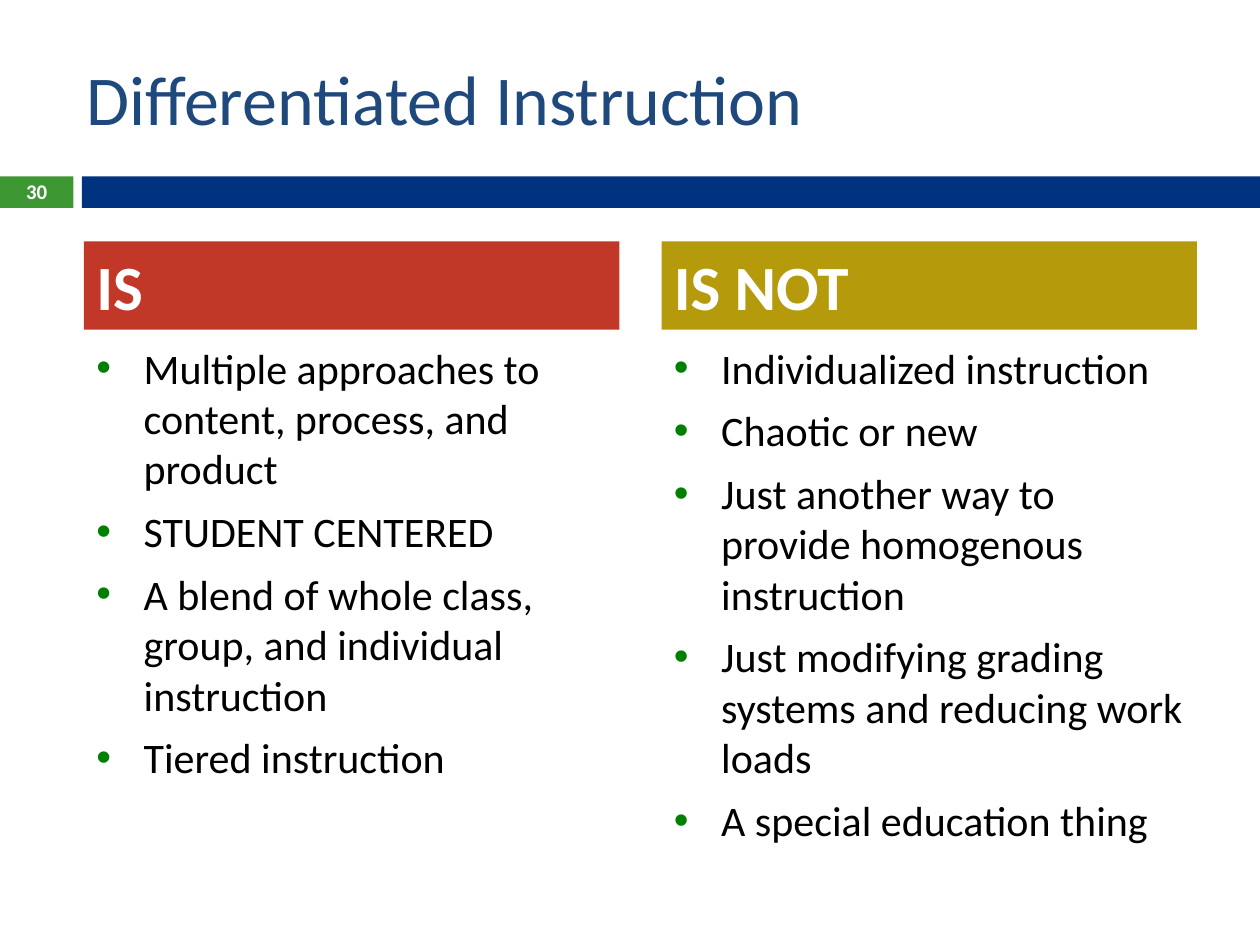
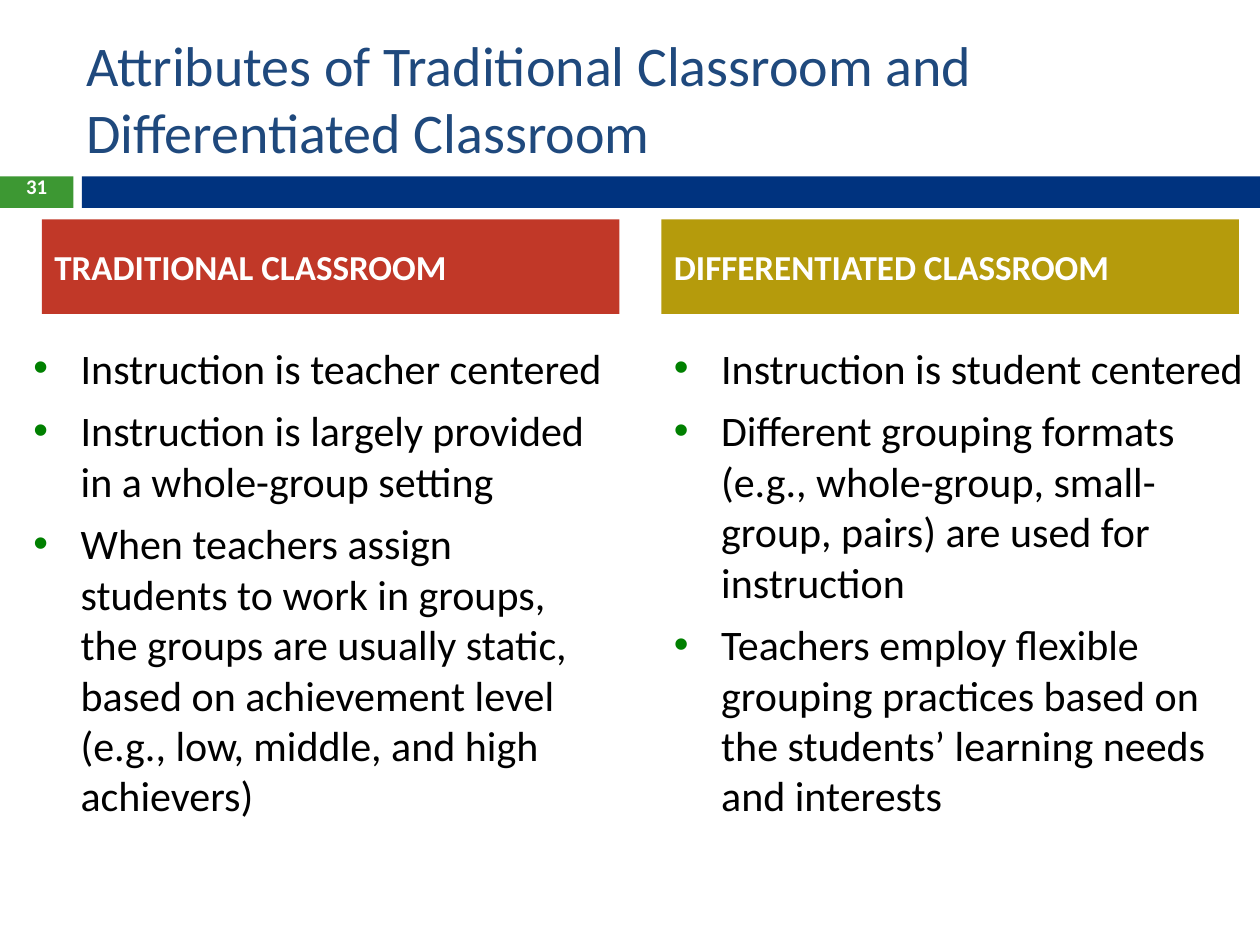
from lxml import etree
from pptx import Presentation
from pptx.dml.color import RGBColor
from pptx.enum import shapes, text
from pptx.oxml import ns
from pptx.util import Pt

FONT = "Calibri"
WHITE, BLACK = "FFFFFF", "000000"
TITLE_BLUE, BAND_BLUE, BAND_GREEN = "1F497D", "00337F", "3D9833"
HEADING_COLORS = ("C13828", "B59B0C")
BULLET_GREEN = "008000"

SLIDE_WIDTH, SLIDE_HEIGHT = 720, 540
BAND_TOP, BAND_HEIGHT = 100.8, 18
NUMBER_WIDTH, BAND_LEFT = 42, 46.8
BODY_TOP, RIGHT_COLUMN = 192, 378
BULLET_INDENT = 27

# Each column: heading left, body left, body height, heading, bullet points
SLIDES = [
    dict(
        title="Differentiated Instruction", title_size=40,
        number="30", number_top=100.8, number_height=19.4,
        heading_top=138, heading_width=306, heading_height=50.4,
        heading_size=36, body_width=306,
        columns=[
            (48, 48, 282, "IS", [
                "Multiple approaches to content, process, and product",
                "STUDENT CENTERED",
                "A blend of whole class, group, and individual instruction",
                "Tiered instruction",
            ]),
            (RIGHT_COLUMN, RIGHT_COLUMN, 348, "IS NOT", [
                "Individualized instruction",
                "Chaotic or new",
                "Just another way to provide homogenous instruction",
                "Just modifying grading systems and reducing work loads",
                "A special education thing",
            ]),
        ],
    ),
    dict(
        title="Attributes of Traditional Classroom and Differentiated Classroom",
        title_size=32,
        number="31", number_top=90, number_height=35.3,
        heading_top=125.4, heading_width=330, heading_height=54,
        heading_size=20, body_width=342,
        columns=[
            (24, 12, 330, "TRADITIONAL CLASSROOM", [
                "Instruction is teacher centered",
                "Instruction is largely provided in a whole-group setting",
                "When teachers assign students to work in groups, the groups are "
                "usually static, based on achievement level (e.g., low, middle, "
                "and high achievers)",
            ]),
            (RIGHT_COLUMN, RIGHT_COLUMN, 300, "DIFFERENTIATED CLASSROOM", [
                "Instruction is student centered",
                "Different grouping formats (e.g., whole-group, small-group, "
                "pairs) are used for instruction",
                "Teachers employ flexible grouping practices based on the "
                "students’ learning needs and interests",
            ]),
        ],
    ),
]


def color(hex_string):
    return RGBColor.from_string(hex_string)


def prepare_frame(shape, anchor):
    frame = shape.text_frame
    frame.word_wrap = True
    frame.auto_size = text.MSO_AUTO_SIZE.NONE
    frame.vertical_anchor = anchor
    frame.margin_left = frame.margin_right = Pt(7.2)
    frame.margin_top = frame.margin_bottom = Pt(3.6)
    return frame


def add_run(paragraph, words, size, hex_string, bold=False,
            align=text.PP_ALIGN.LEFT):
    paragraph.alignment = align
    run = paragraph.add_run()
    run.text = words
    run.font.name = FONT
    run.font.size = Pt(size)
    run.font.bold = bold
    run.font.color.rgb = color(hex_string)


def add_rectangle(slide, left, top, width, height, fill):
    shape = slide.shapes.add_shape(shapes.MSO_SHAPE.RECTANGLE,
                                   Pt(left), Pt(top), Pt(width), Pt(height))
    shape.shadow.inherit = False
    shape.fill.solid()
    shape.fill.fore_color.rgb = color(fill)
    shape.line.fill.background()
    return shape


def add_bands(slide):
    add_rectangle(slide, 0, BAND_TOP, NUMBER_WIDTH, BAND_HEIGHT, BAND_GREEN)
    add_rectangle(slide, BAND_LEFT, BAND_TOP, SLIDE_WIDTH - BAND_LEFT,
                  BAND_HEIGHT, BAND_BLUE)


def set_title(slide, words, size):
    title = slide.shapes.title
    title.left, title.top = Pt(42), Pt(21.6)
    title.width, title.height = Pt(642), Pt(68.4)
    frame = prepare_frame(title, text.MSO_ANCHOR.MIDDLE)
    add_run(frame.paragraphs[0], words, size, TITLE_BLUE)


def add_bullet(paragraph):
    properties = paragraph._p.get_or_add_pPr()
    properties.set("marL", str(Pt(BULLET_INDENT)))
    properties.set("indent", str(-Pt(BULLET_INDENT)))
    bullet_color = etree.SubElement(properties, ns.qn("a:buClr"))
    etree.SubElement(bullet_color, ns.qn("a:srgbClr"), val=BULLET_GREEN)
    etree.SubElement(properties, ns.qn("a:buFont"), typeface="Arial")
    etree.SubElement(properties, ns.qn("a:buChar"), char="•")


def add_bullet_list(slide, left, width, height, points):
    box = slide.shapes.add_textbox(Pt(left), Pt(BODY_TOP), Pt(width), Pt(height))
    frame = prepare_frame(box, text.MSO_ANCHOR.TOP)
    for index, point in enumerate(points):
        paragraph = frame.add_paragraph() if index else frame.paragraphs[0]
        add_bullet(paragraph)
        if index:
            paragraph.space_before = Pt(7)
        add_run(paragraph, point, 24, BLACK)


def add_heading(slide, left, content, words, fill):
    shape = add_rectangle(slide, left, content["heading_top"],
                          content["heading_width"], content["heading_height"], fill)
    frame = prepare_frame(shape, text.MSO_ANCHOR.MIDDLE)
    add_run(frame.paragraphs[0], words, content["heading_size"], WHITE, bold=True)


def add_slide_number(slide, number, top, height):
    box = slide.shapes.add_textbox(0, Pt(top), Pt(NUMBER_WIDTH), Pt(height))
    paragraph = prepare_frame(box, text.MSO_ANCHOR.MIDDLE).paragraphs[0]
    paragraph.line_spacing = 0.8
    add_run(paragraph, number, 11.9, WHITE, bold=True, align=text.PP_ALIGN.CENTER)


def add_comparison_slide(presentation, content):
    slide = presentation.slides.add_slide(
        presentation.slide_layouts.get_by_name("Title Only"))
    add_bands(slide)
    set_title(slide, content["title"], content["title_size"])
    for column, fill in zip(content["columns"], HEADING_COLORS):
        heading_left, body_left, body_height, heading, points = column
        add_bullet_list(slide, body_left, content["body_width"], body_height, points)
        add_heading(slide, heading_left, content, heading, fill)
    add_slide_number(slide, content["number"], content["number_top"],
                     content["number_height"])


def main():
    presentation = Presentation()
    presentation.slide_width = Pt(SLIDE_WIDTH)
    presentation.slide_height = Pt(SLIDE_HEIGHT)
    for content in SLIDES:
        add_comparison_slide(presentation, content)
    presentation.save("out.pptx")


if __name__ == "__main__":
    main()
